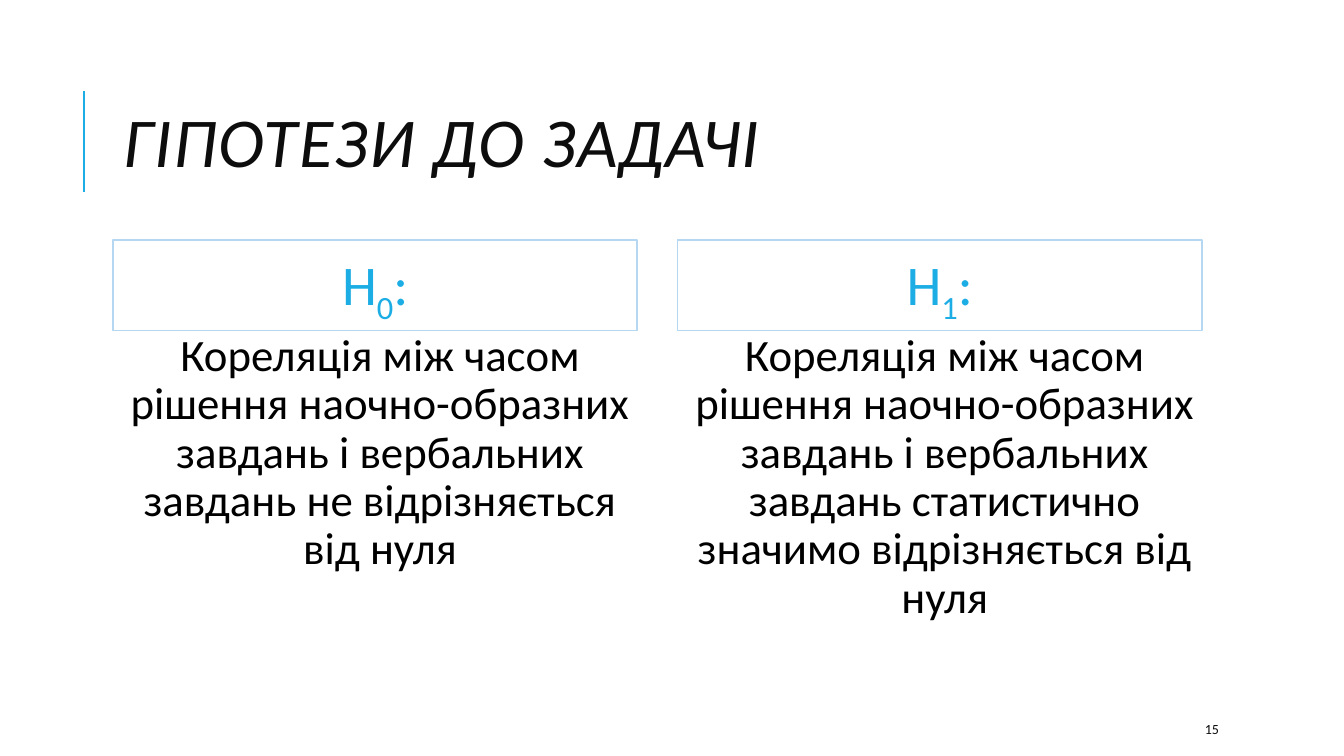
from lxml import etree
from pptx import Presentation
from pptx.dml.color import RGBColor
from pptx.enum.shapes import MSO_CONNECTOR, MSO_SHAPE
from pptx.enum.text import MSO_ANCHOR, MSO_AUTO_SIZE, PP_ALIGN
from pptx.oxml.ns import qn
from pptx.util import Inches, Pt

LEFT, CENTER = PP_ALIGN.LEFT, PP_ALIGN.CENTER
TOP, MIDDLE = MSO_ANCHOR.TOP, MSO_ANCHOR.MIDDLE
NO_FIT = MSO_AUTO_SIZE.NONE
RECT, STRAIGHT = MSO_SHAPE.RECTANGLE, MSO_CONNECTOR.STRAIGHT
COL, ROW = 0.7, 0.25
FIRST_COL, COL_STEP, COL_SPAN = 1.6, 8, 7.43
COLORS = {"accent": "1CADE4", "frame": "B5D7F1", "dark": "0D0D0D", "text": "000000"}
HYPOTHESES = [
    ("0", "Кореляція між часом рішення наочно-образних завдань і вербальних "
          "завдань не відрізняється від нуля"),
    ("1", "Кореляція між часом рішення наочно-образних завдань і вербальних "
          "завдань статистично значимо відрізняється від нуля"),
]


class Deck:
    """Slide builder that places styled elements on a grid of columns and rows."""

    def __init__(self):
        self.prs = Presentation()
        self.prs.slide_width, self.prs.slide_height = Inches(13.33), Inches(7.5)
        self.s = self.prs.slides.add_slide(self.prs.slide_layouts[5])

    def box(self, col, row, cols, rows):
        return (Inches(col * COL), Inches(row * ROW),
                Inches(cols * COL), Inches(rows * ROW))

    def color(self, name):
        return RGBColor.from_string(COLORS[name])

    def set_text(self, sp, runs, size, color, align=LEFT, anchor=MIDDLE, spacing=1.0, inset=0.1):
        tf = sp.text_frame
        tf.word_wrap, tf.auto_size, tf.vertical_anchor = True, NO_FIT, anchor
        tf.margin_left = tf.margin_right = Inches(inset)
        tf.margin_top = tf.margin_bottom = Inches(0.05)
        p = tf.paragraphs[0]
        for text in runs:
            p.add_run().text = text
        p.alignment, p.line_spacing, p.space_before = align, spacing, Pt(0)
        p.font.name, p.font.size = "Calibri", Pt(size)
        p.font.color.rgb = self.color(color)
        return p

    def title(self, text, box):
        sp = self.s.shapes.title
        sp.left, sp.top, sp.width, sp.height = box
        p = self.set_text(sp, [text], 50, "dark", spacing=0.8)
        p.font.italic = True
        p.runs[0].font._element.set("spc", "100")

    def rule(self, col, row, rows):
        x, y, _, h = self.box(col, row, 0, rows)
        ln = self.s.shapes.add_connector(STRAIGHT, x, y + h, x, y)
        ln.line.color.rgb, ln.line.width = self.color("accent"), Pt(1.5)
        etree.SubElement(ln._element.spPr, qn("a:effectLst"))

    def heading(self, index, box):
        sp = self.s.shapes.add_shape(RECT, *box)
        sp.shadow.inherit = False
        sp.fill.background()
        sp.line.color.rgb, sp.line.width = self.color("frame"), Pt(1.25)
        p = self.set_text(sp, ["Н", index, ":"], 40, "accent", CENTER, spacing=0.9, inset=0.15)
        p.runs[1].font._element.set("baseline", "-25000")

    def body(self, text, box):
        sp = self.s.shapes.add_textbox(*box)
        p = self.set_text(sp, [text], 32, "text", CENTER, TOP, 0.9, 0.05)
        p._p.get_or_add_pPr().set("marL", str(Inches(0.1)))

    def page_number(self, text, box):
        self.set_text(self.s.shapes.add_textbox(*box), [text], 10, "dark")


def main():
    deck = Deck()
    deck.rule(1.19, 3.6, 4)
    deck.title("ГІПОТЕЗИ ДО ЗАДАЧІ", deck.box(FIRST_COL, 2.56, 15.19, 6.56))
    for i, (index, text) in enumerate(HYPOTHESES):
        col = FIRST_COL + i * COL_STEP
        deck.heading(index, deck.box(col, 9.52, COL_SPAN, 3.6))
        deck.body(text, deck.box(col, 13, COL_SPAN, 14.6))
    deck.page_number("15", deck.box(16.93, 28.32, 1.51, 1.2))
    deck.prs.save("out.pptx")


if __name__ == "__main__":
    main()
